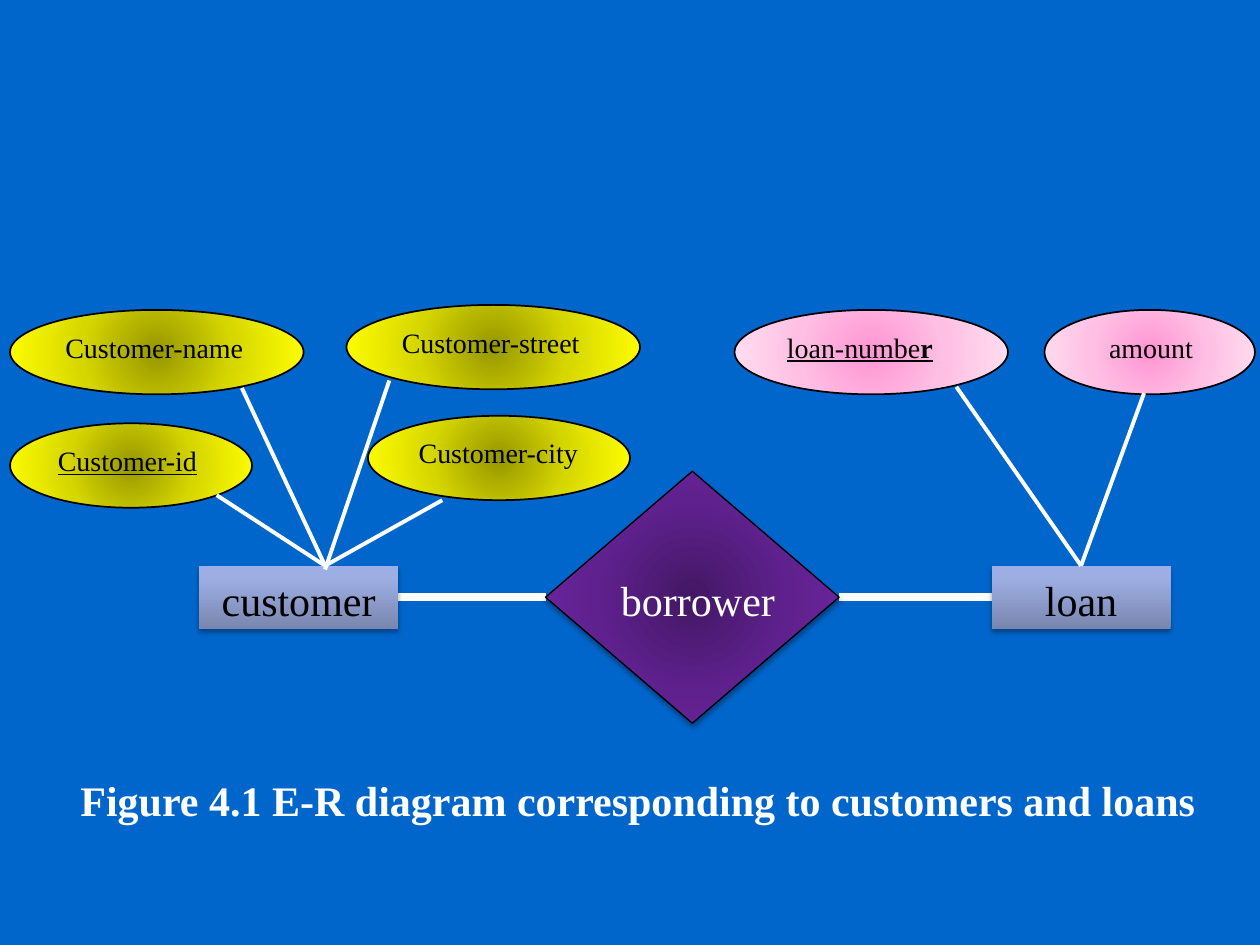
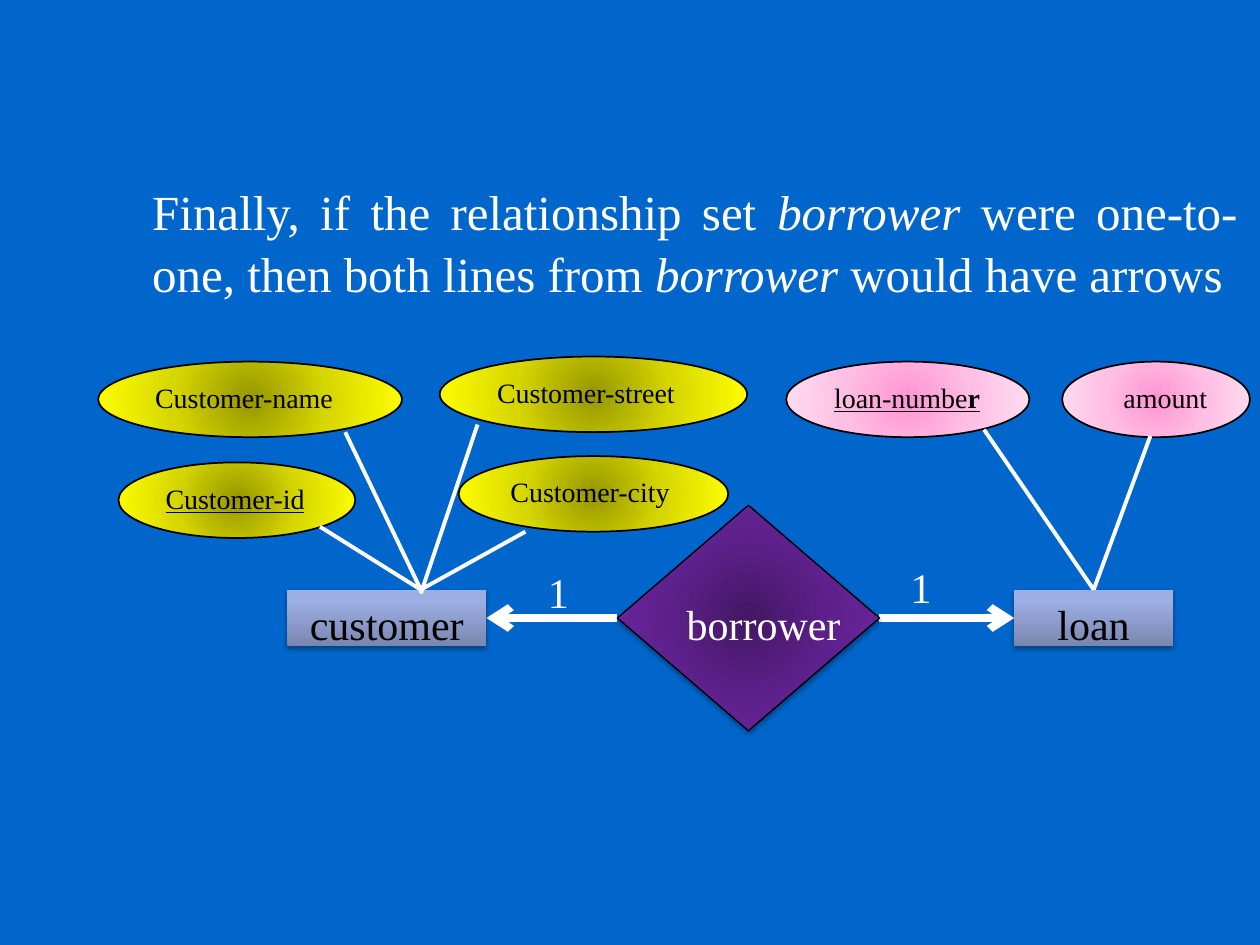
from lxml.etree import SubElement
from pptx import Presentation
from pptx.dml.color import RGBColor
from pptx.enum.shapes import MSO_CONNECTOR, MSO_SHAPE
from pptx.enum.text import MSO_ANCHOR, PP_ALIGN
from pptx.oxml.ns import qn
from pptx.util import Inches, Pt

FONT = "Times New Roman"
BLUE = RGBColor(0x00, 0x66, 0xCC)
WHITE = RGBColor(0xFF, 0xFF, 0xFF)
BLACK = RGBColor(0x00, 0x00, 0x00)


def stops(*pairs):
    return [(position, RGBColor.from_string(code)) for position, code in pairs]


YELLOW = stops((0, "979700"), (50, "D7D700"), (100, "FFFF00"))
PINK = stops((0, "FF95D4"), (50, "FFBEE3"), (100, "FFDFF1"))
PURPLE = stops((0, "431764"), (50, "5F218E"), (100, "7128A8"))
STEEL = stops((0, "7986AF"), (80, "9DAEE3"), (100, "9CAEE6"))

# Text runs are (text, font attributes)
CUSTOMER_ID = [("Customer-id", {"underline": True})]
CUSTOMER_NAME = [("Customer-name", {})]
CUSTOMER_STREET = [("Customer-street", {})]
CUSTOMER_CITY = [("Customer-city", {})]
LOAN_NUMBER = [("loan-numbe", {"underline": True}),
               ("r", {"underline": True, "bold": True})]
AMOUNT = [("amount", {})]


def add_page(deck):
    page = deck.slides.add_slide(deck.slide_layouts[6])
    page.background.fill.solid()
    page.background.fill.fore_color.rgb = BLUE
    return page


def write(shape, runs, size, color, align=PP_ALIGN.LEFT, indent=0):
    frame = shape.text_frame
    frame.word_wrap = True
    frame.vertical_anchor = MSO_ANCHOR.TOP
    para = frame.paragraphs[0]
    para.alignment = align
    para.line_spacing = 1.05
    if indent:
        para._p.get_or_add_pPr().set("marL", str(Inches(indent)))
    for text, style in runs:
        span = para.add_run()
        span.text = text
        for name, value in style.items():
            setattr(span.font, name, value)
    para.font.name = FONT
    para.font.size = Pt(size)
    para.font.color.rgb = color


def add_text(page, place, runs, size=24, align=PP_ALIGN.LEFT):
    box = page.shapes.add_textbox(*map(Inches, place))
    write(box, runs, size, WHITE, align)


def fill_gradient(shape, colors, angle=None):
    """Fill along an angle in degrees, or outward from the centre without one."""
    shape.fill.gradient()
    gradient = shape._element.spPr.find(qn("a:gradFill"))
    for child in list(gradient):
        gradient.remove(child)
    stop_list = SubElement(gradient, qn("a:gsLst"))
    for position, color in colors:
        stop = SubElement(stop_list, qn("a:gs"), pos=str(position * 1000))
        SubElement(stop, qn("a:srgbClr"), val=str(color))
    if angle is None:
        circle = SubElement(gradient, qn("a:path"), path="circle")
        SubElement(circle, qn("a:fillToRect"),
                   dict.fromkeys(("l", "t", "r", "b"), "50000"))
    else:
        SubElement(gradient, qn("a:lin"), ang=str(angle * 60000), scaled="0")


def add_figure(page, kind, place, colors, angle=None, outline=None):
    shape = page.shapes.add_shape(kind, *map(Inches, place))
    shape.shadow.inherit = False
    fill_gradient(shape, colors, angle)
    if outline:
        shape.line.color.rgb = BLACK
        shape.line.width = Pt(outline)
    else:
        shape.line.fill.background()
    return shape


def drop_shadow(shape):
    effects = shape._element.spPr.find(qn("a:effectLst"))
    shadow = SubElement(effects, qn("a:outerShdw"), blurRad=str(Pt(3.1)),
                        dist=str(Pt(1.8)), dir="5400000", rotWithShape="0")
    color = SubElement(shadow, qn("a:srgbClr"), val=str(BLACK))
    SubElement(color, qn("a:alpha"), val="35000")


def add_attribute(page, place, runs, colors):
    oval = add_figure(page, MSO_SHAPE.OVAL, place, colors, outline=1)
    oval.text_frame.margin_right = 0
    write(oval, runs, 16, BLACK, indent=0.17 if runs is AMOUNT else 0)


def add_entity(page, place, name):
    box = add_figure(page, MSO_SHAPE.RECTANGLE, place, STEEL, angle=270)
    drop_shadow(box)
    write(box, [(name, {})], 24, BLACK, PP_ALIGN.CENTER)


def add_relationship(page, place, label_place):
    diamond = add_figure(page, MSO_SHAPE.DIAMOND, place, PURPLE, outline=0.75)
    drop_shadow(diamond)
    add_text(page, label_place, [("borrower", {})])


def add_line(page, start, end, width=2.25, arrow=False):
    line = page.shapes.add_connector(MSO_CONNECTOR.STRAIGHT,
                                     *map(Inches, (*start, *end)))
    line.line.color.rgb = WHITE
    line.line.width = Pt(width)
    if arrow:
        SubElement(line.line._get_or_add_ln(), qn("a:tailEnd"), type="arrow")
    SubElement(line._element.spPr, qn("a:effectLst"))


def add_er_diagram(page, customer, loan, diamond, label, attributes, spokes,
                   arrows=False):
    """Draw both entities, their attributes and the relationship between them.

    Spokes pair an attribute's edge point with a point on its entity.
    """
    left, top, width, height = diamond
    middle = top + height / 2
    add_line(page, (left, middle), (customer[0] + customer[2], middle), 4.5, arrows)
    add_line(page, (left + width, middle), (loan[0], middle), 4.5, arrows)
    for place, runs, colors in attributes:
        add_attribute(page, place, runs, colors)
    add_relationship(page, diamond, label)
    add_entity(page, customer, "customer")
    add_entity(page, loan, "loan")
    for start, end in spokes:
        add_line(page, start, end)


def add_customers_and_loans(deck):
    page = add_page(deck)
    height = 0.67
    customer_top, loan_top = (2.58, 4.49), (8.58, 4.49)
    add_er_diagram(
        page,
        customer=(1.58, 4.49, 1.58, 0.5),
        loan=(7.87, 4.49, 1.42, 0.5),
        diamond=(4.33, 3.74, 2.33, 2),
        label=(4.83, 4.49, 2.33, 0.5),
        attributes=[
            ((0.08, 3.36, 1.92, height), CUSTOMER_ID, YELLOW),
            ((0.08, 2.46, 2.33, height), CUSTOMER_NAME, YELLOW),
            ((2.75, 2.42, 2.33, height), CUSTOMER_STREET, YELLOW),
            ((2.92, 3.3, 2.08, height), CUSTOMER_CITY, YELLOW),
            ((5.83, 2.46, 2.17, height), LOAN_NUMBER, PINK),
            ((8.29, 2.46, 1.67, height), AMOUNT, PINK),
        ],
        spokes=[
            ((3.09, 3.02), (2.58, 4.52)),
            ((1.92, 3.08), customer_top),
            ((3.51, 3.97), customer_top),
            ((1.72, 3.93), customer_top),
            ((9.08, 3.12), loan_top),
            ((7.59, 3.07), loan_top),
        ])
    caption = "Figure 4.1 E-R diagram corresponding to customers and loans"
    add_text(page, (0.54, 6.08, 9.42, 0.5), [(caption, {"bold": True})])


def add_one_to_one(deck):
    page = add_page(deck)
    italic = {"italic": True}
    add_text(page, (1.11, 1.37, 8.81, 1.04), [
        ("Finally, if the relationship set ", {}),
        ("borrower ", italic),
        ("were one-to-one, then both lines from ", {}),
        ("borrower ", italic),
        ("would have arrows", {}),
    ], size=28, align=PP_ALIGN.JUSTIFY)
    height = 0.6
    customer_top, loan_top = (3.34, 4.68), (8.68, 4.68)
    add_er_diagram(
        page,
        customer=(2.28, 4.68, 1.58, 0.45),
        loan=(8.05, 4.68, 1.26, 0.45),
        diamond=(4.9, 4.01, 2.08, 1.79),
        label=(5.35, 4.68, 2.08, 0.45),
        attributes=[
            ((0.94, 3.67, 1.88, height), CUSTOMER_ID, YELLOW),
            ((0.78, 2.87, 2.41, height), CUSTOMER_NAME, YELLOW),
            ((3.49, 2.83, 2.44, height), CUSTOMER_STREET, YELLOW),
            ((3.64, 3.62, 2.14, height), CUSTOMER_CITY, YELLOW),
            ((6.24, 2.87, 1.93, height), LOAN_NUMBER, PINK),
            ((8.43, 2.87, 1.49, height), AMOUNT, PINK),
        ],
        spokes=[
            ((3.79, 3.37), (3.34, 4.71)),
            ((2.74, 3.43), customer_top),
            ((4.17, 4.22), customer_top),
            ((2.54, 4.18), customer_top),
            ((9.13, 3.46), loan_top),
            ((7.81, 3.41), loan_top),
        ],
        arrows=True)
    for left, top in ((4.25, 4.43), (7.13, 4.39)):
        add_text(page, (left, top, 0.46, 0.5), [("1", {})])


def main():
    deck = Presentation()
    deck.slide_width, deck.slide_height = Inches(10), Inches(7.5)
    add_customers_and_loans(deck)
    add_one_to_one(deck)
    deck.save("out.pptx")


if __name__ == "__main__":
    main()
